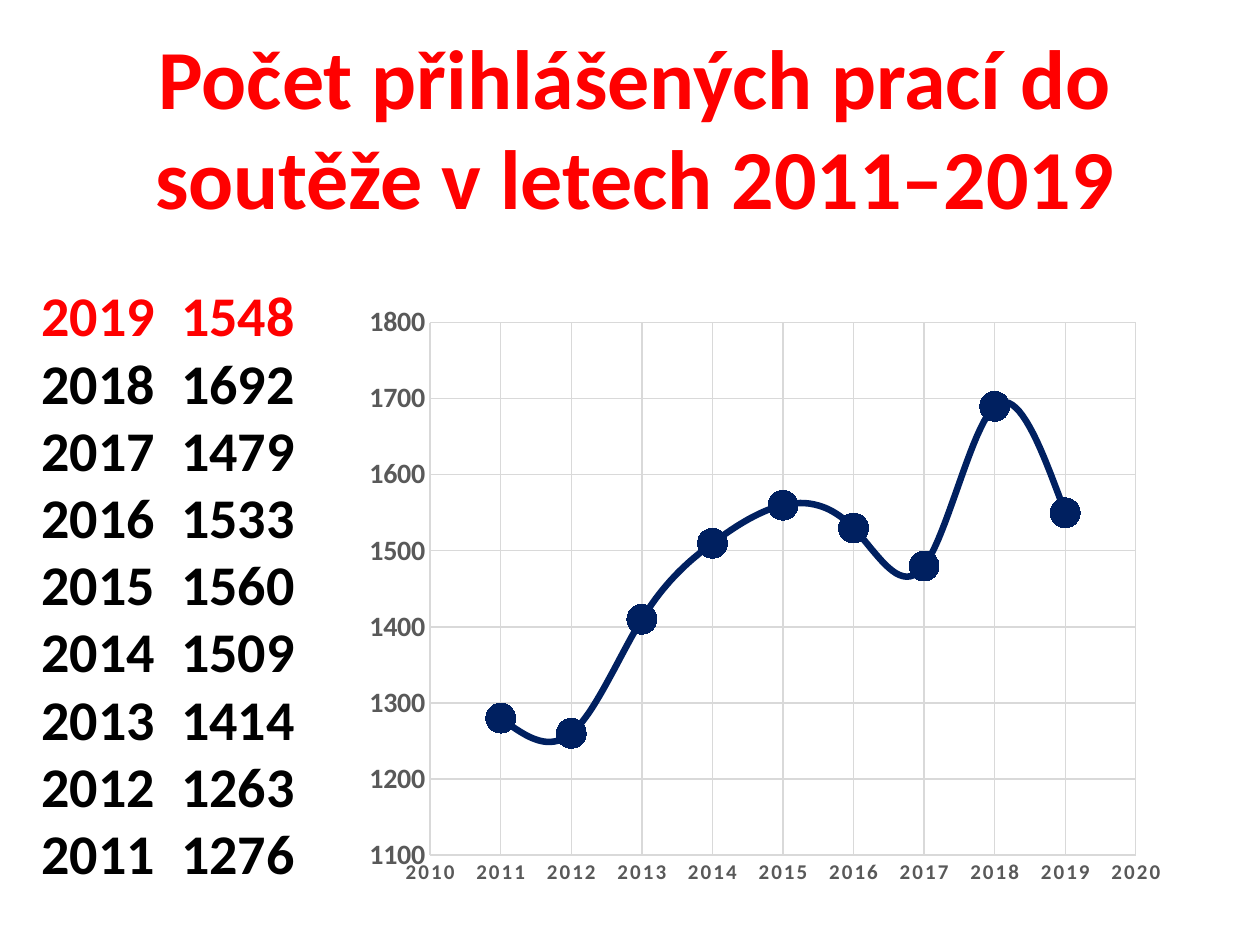
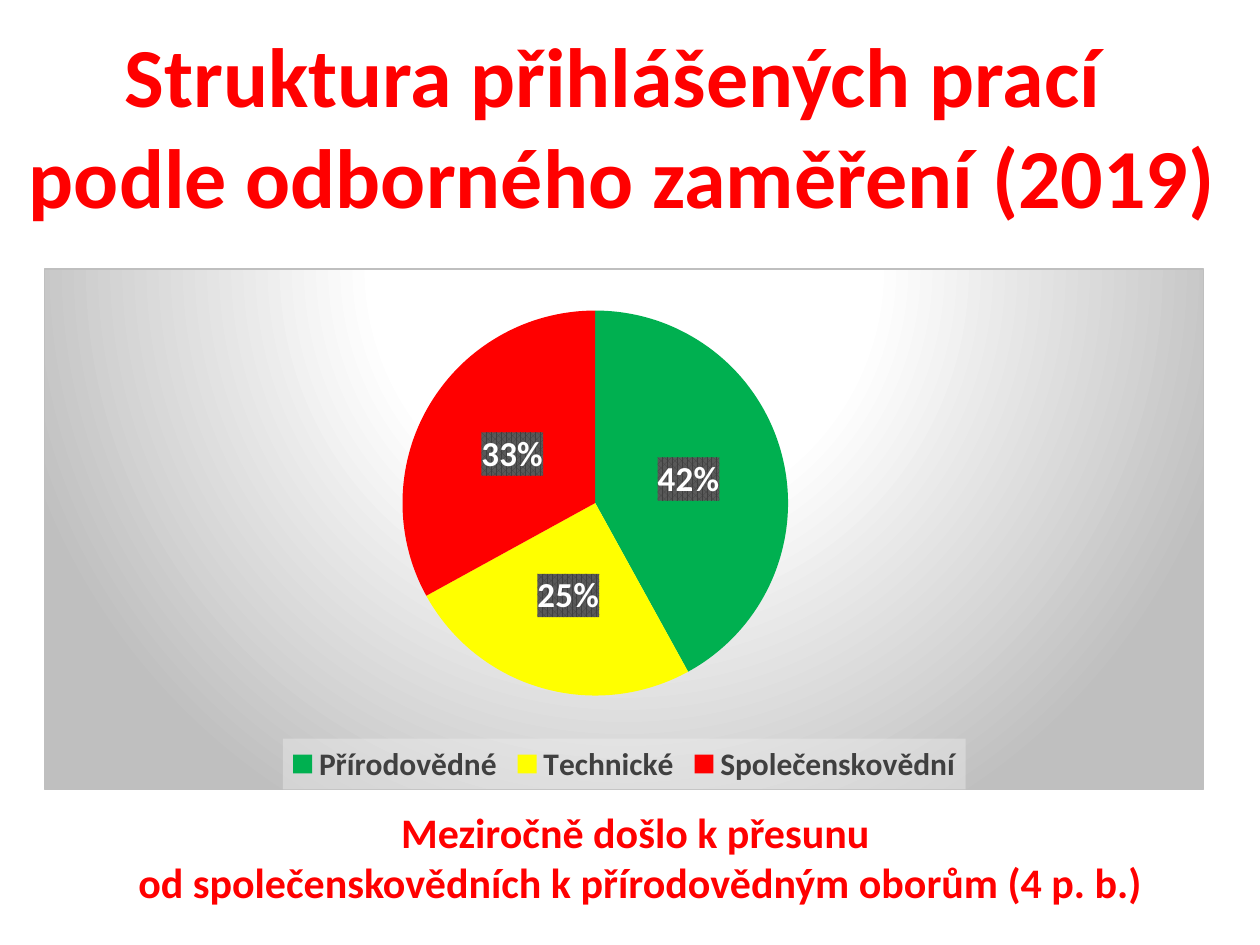
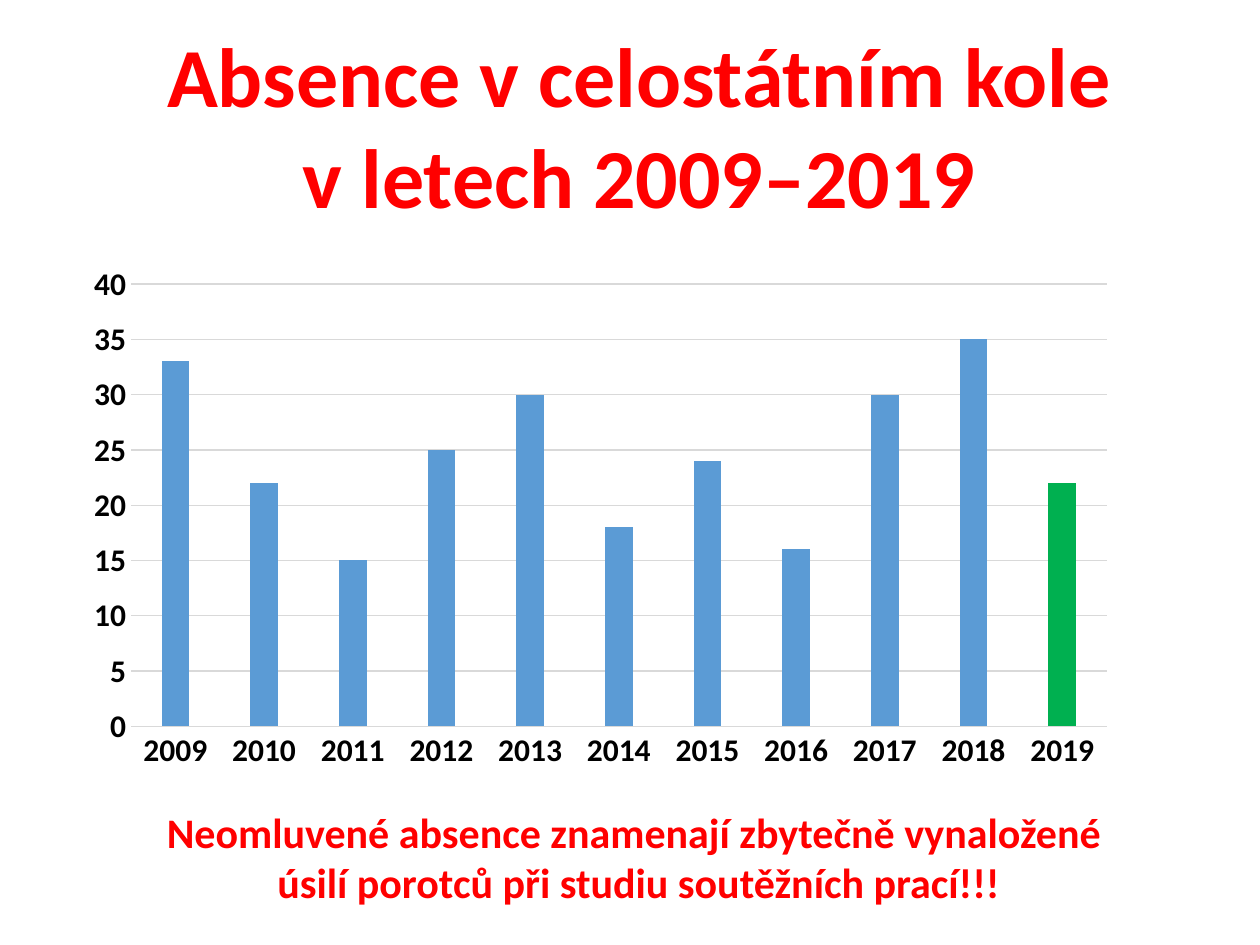
from lxml.etree import fromstring
from pptx import Presentation
from pptx.chart.data import CategoryChartData as CatData, XyChartData as XyData
from pptx.dml.color import RGBColor
from pptx.enum.chart import (XL_CHART_TYPE as Kind, XL_LABEL_POSITION as Spot,
                             XL_LEGEND_POSITION as Side, XL_MARKER_STYLE as Mark,
                             XL_TICK_MARK as Tick)
from pptx.enum.text import PP_ALIGN as Align
from pptx.oxml.ns import nsdecls, qn
from pptx.util import Inches, Pt

RED = RGBColor(0xFF, 0x00, 0x00)
BLACK = RGBColor(0x00, 0x00, 0x00)
WHITE = RGBColor(0xFF, 0xFF, 0xFF)
NAVY = RGBColor(0x00, 0x20, 0x60)
BLUE = RGBColor(0x5B, 0x9B, 0xD5)
GREEN = RGBColor(0x00, 0xB0, 0x50)
YELLOW = RGBColor(0xFF, 0xFF, 0x00)
GRID = RGBColor(0xD9, 0xD9, 0xD9)
GREY = RGBColor(0x59, 0x59, 0x59)
DARK = RGBColor(0x40, 0x40, 0x40)
FONT = "Calibri"
TITLE, NOTE, LIST = 48, 24, 32


def style(font, size, color):
    font.name, font.size, font.bold = FONT, Pt(size), True
    font.color.rgb = color


def paint(part, xml):
    """Give a chart part a fill and line; they come just before its font."""
    look = fromstring(f"<c:spPr {nsdecls('c', 'a')}>{xml}</c:spPr>")
    part.find(qn("c:txPr")).addprevious(look)


prs = Presentation()
prs.slide_width, prs.slide_height = Inches(10), Inches(7.5)
slides = [prs.slides.add_slide(prs.slide_layouts[6]) for _ in range(3)]
first, second, third = slides

# Yearly counts, newest first
counts = {2019: 1548, 2018: 1692, 2017: 1479, 2016: 1533, 2015: 1560,
          2014: 1509, 2013: 1414, 2012: 1263, 2011: 1276}
rows = [f"{year}\t{count}" for year, count in counts.items()]

# Titles, notes and the list of counts
texts = [
    (first, (0.67, 0.15, 8.74, 1.72), TITLE,
     ["Počet přihlášených prací do soutěže v letech 2011–2019"]),
    (first, (0.23, 2.18, 9.57, 4.95), LIST, rows),
    (second, (0, 0.14, 9.88, 1.72), TITLE,
     ["Struktura přihlášených prací ", "podle odborného zaměření (2019)"]),
    (second, (0.59, 6.35, 8.98, 0.91), NOTE,
     ["Meziročně došlo k přesunu ",
      "od společenskovědních k přírodovědným oborům (4 p. b.)"]),
    (third, (1.19, 0.14, 7.77, 1.72), TITLE,
     ["Absence v celostátním kole", "v letech 2009–2019"]),
    (third, (0.58, 6.35, 8.98, 0.91), NOTE,
     ["Neomluvené absence znamenají zbytečně vynaložené ",
      "úsilí porotců při studiu soutěžních prací!!!"]),
]
for slide, box, size, lines in texts:
    frame = slide.shapes.add_textbox(*map(Inches, box)).text_frame
    frame.word_wrap = True
    for i, line in enumerate(lines):
        para = frame.add_paragraph() if i else frame.paragraphs[0]
        para.text = line
        listed = size == LIST
        para.alignment = Align.LEFT if listed else Align.CENTER
        style(para.font, size, BLACK if listed and i else RED)
        if listed:
            tabs = fromstring(f'<a:tabLst {nsdecls("a")}>'
                              f'<a:tab pos="{Inches(1.11)}" algn="l"/></a:tabLst>')
            para.font._element.addprevious(tabs)

# Chart data, with the counts rounded to tens
trend = XyData()
points = trend.add_series("Series 1")
for year, count in counts.items():
    points.add_data_point(year, round(count, -1))

share = CatData()
share.categories = ["Přírodovědné", "Technické", "Společenskovědní"]
share.add_series("Series 1", [42, 25, 33])

absent = CatData()
absent.categories = [str(year) for year in range(2009, 2020)]
absent.add_series("Series 1", [33, 22, 15, 25, 30, 18, 24, 16, 30, 35, 22])

# Charts
charts = []
for slide, kind, box, data in [
    (first, Kind.XY_SCATTER_SMOOTH, (2.8, 2.33, 6.54, 4.79), trend),
    (second, Kind.PIE, (0.35, 2.13, 9.21, 4.14), share),
    (third, Kind.COLUMN_CLUSTERED, (0.58, 2.02, 8.37, 4.17), absent),
]:
    chart = slide.shapes.add_chart(kind, *map(Inches, box), data).chart
    chart.has_title = chart.has_legend = False
    chart.font.name, chart.font.size = FONT, Pt(10)
    chart.plots[0].vary_by_categories = kind == Kind.PIE
    charts.append(chart)
curve, pie, bars = charts

# Axes
for axis, size, color, low, high, step, grid in [
    (curve.category_axis, 12, GREY, 2010, 2020, 1, True),
    (curve.value_axis, 16, GREY, 1100, 1800, 100, True),
    (bars.category_axis, 18, BLACK, None, None, None, False),
    (bars.value_axis, 18, BLACK, 0, 40, 5, True),
]:
    style(axis.tick_labels.font, size, color)
    axis.major_tick_mark = axis.minor_tick_mark = Tick.NONE
    axis.has_major_gridlines = grid
    lines = [axis.format.line]
    if grid:
        lines.append(axis.major_gridlines.format.line)
    for line in lines:
        line.color.rgb, line.width = GRID, Pt(0.75)
    if step:
        axis.minimum_scale, axis.maximum_scale = low, high
        axis.major_unit = step
bars.value_axis.format.line.fill.background()
curve.category_axis.tick_labels.font._element.set("spc", "120")

# Smooth curve of counts
trace = curve.plots[0].series[0]
trace._element.find(qn("c:smooth")).set("val", "1")
trace.format.line.color.rgb = NAVY
trace.format.line.width = Pt(3.75)
dot = trace.marker
dot.style, dot.size = Mark.CIRCLE, 17
dot.format.fill.solid()
dot.format.fill.fore_color.rgb = NAVY
dot.format.line.color.rgb = NAVY

# Pie slices, labels and legend
plot = pie.plots[0]
for i, color in enumerate([GREEN, YELLOW, RED]):
    fill = plot.series[0].points[i].format.fill
    fill.solid()
    fill.fore_color.rgb = color
plot.has_data_labels = True
labels = plot.data_labels
labels.show_percentage, labels.show_value = True, False
labels.number_format, labels.number_format_is_linked = "0%", False
labels.position = Spot.CENTER
style(labels.font, 20, WHITE)
paint(labels._element, f"""<a:pattFill prst="pct75">
    <a:fgClr><a:srgbClr val="{DARK}"/></a:fgClr>
    <a:bgClr><a:srgbClr val="{GREY}"/></a:bgClr></a:pattFill>""")
pie.has_legend = True
pie.legend.position = Side.BOTTOM
pie.legend.include_in_layout = False
style(pie.legend.font, 18, DARK)
paint(pie.legend._element, """<a:solidFill><a:srgbClr val="F2F2F2">
    <a:alpha val="39000"/></a:srgbClr></a:solidFill>""")

# Pie backdrop and plot place
paint(pie._chartSpace, """<a:gradFill><a:gsLst>
    <a:gs pos="0"><a:srgbClr val="FFFFFF"/></a:gs>
    <a:gs pos="39000"><a:srgbClr val="FFFFFF"/></a:gs>
    <a:gs pos="100000"><a:srgbClr val="BFBFBF"/></a:gs></a:gsLst>
    <a:path path="circle">
    <a:fillToRect l="50000" t="-80000" r="50000" b="180000"/></a:path></a:gradFill>
    <a:ln w="9525"><a:solidFill><a:srgbClr val="BFBFBF"/></a:solidFill></a:ln>""")
area = pie._chartSpace.find(".//" + qn("c:plotArea"))
for old in area.findall(qn("c:layout")):
    area.remove(old)
place = "".join(f'<c:{key} val="{val}"/>' for key, val in [
    ("layoutTarget", "inner"), ("xMode", "edge"), ("yMode", "edge"),
    ("x", 0), ("y", 0.08), ("w", 0.95), ("h", 0.74)])
area.insert(0, fromstring(f"<c:layout {nsdecls('c')}><c:manualLayout>{place}"
                          "</c:manualLayout></c:layout>"))

# Absence columns, with the last year in green
cols = bars.plots[0]
cols.gap_width, cols.overlap = 219, -27
years = cols.series[0]
for item, color in [(years, BLUE), (years.points[10], GREEN)]:
    item.format.fill.solid()
    item.format.fill.fore_color.rgb = color

prs.save("out.pptx")
